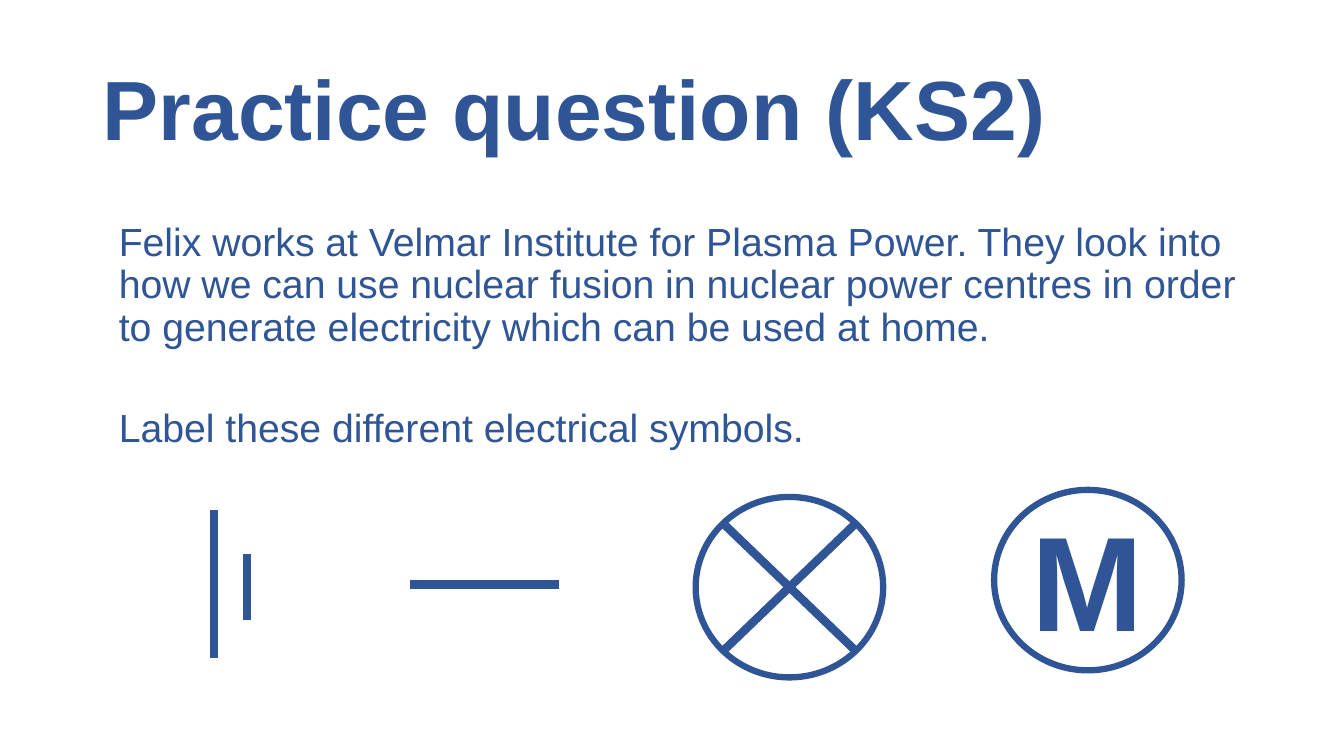
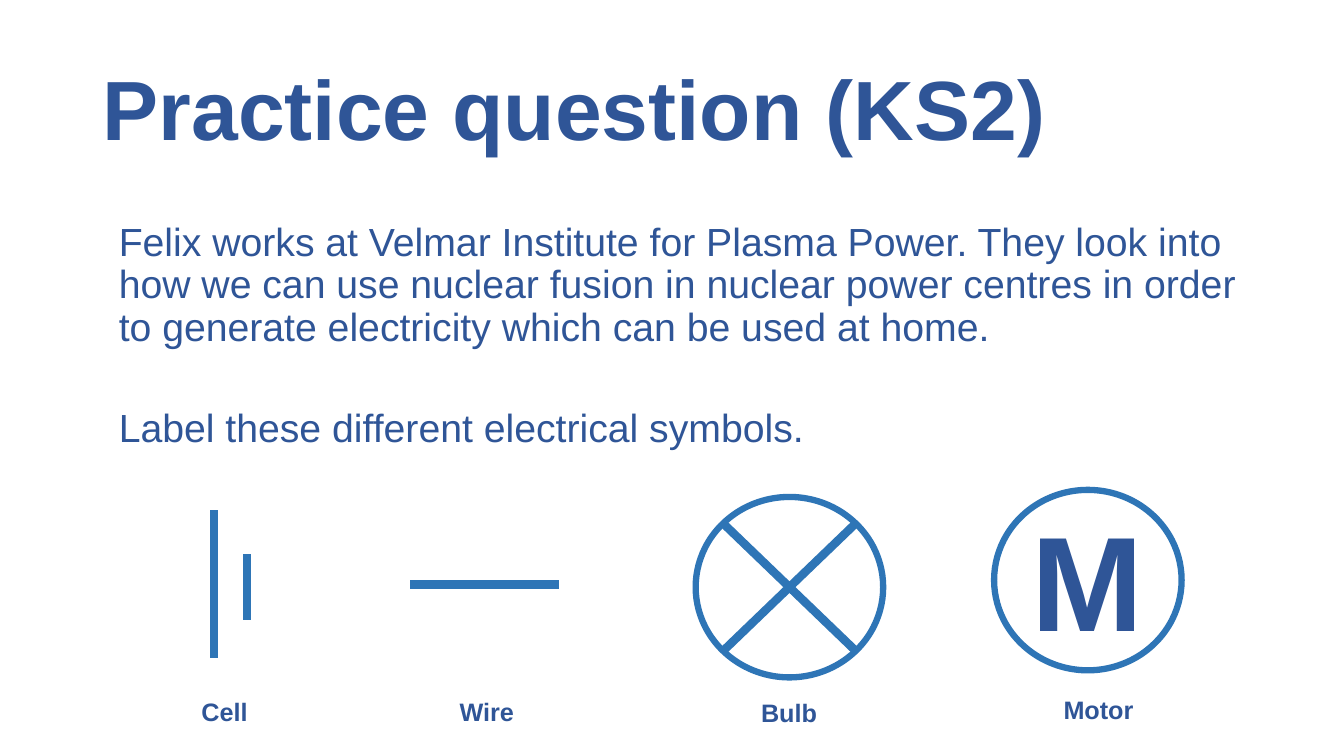
from dataclasses import dataclass
from math import sqrt

from lxml import etree
from pptx import Presentation
from pptx import util as u
from pptx.dml.color import RGBColor
from pptx.enum import shapes, text
from pptx.oxml.ns import qn

PX = 9144  # EMU in one px: 100 px to the inch


@dataclass(frozen=True)
class Theme:
    font: str = "Arial"
    navy: str = "2F5597"
    blue: str = "2E75B6"
    title_size: int = 60
    body_size: int = 28
    motor_size: int = 96
    label_size: int = 18
    stroke: float = 6
    outline: float = 4.5


@dataclass(frozen=True)
class Box:
    left: int
    top: int
    width: int
    height: int

    def emu(self) -> tuple:
        return tuple(u.Emu(n * PX) for n in (self.left, self.top, self.width, self.height))


@dataclass(frozen=True)
class Stroke:
    x1: int
    y1: int
    x2: int
    y2: int


@dataclass(frozen=True)
class Label:
    caption: str
    box: Box


@dataclass(frozen=True)
class Page:
    symbol_color: str
    labels: tuple = ()


THEME = Theme()
TITLE = "Practice question (KS2)"
QUESTION = (
    "Felix works at Velmar Institute for Plasma Power. They look into how we can use "
    "nuclear fusion in nuclear power centres in order to generate electricity which "
    "can be used at home.",
    "Label these different electrical symbols.",
)
TITLE_BOX = Box(92, 40, 1150, 145)
QUESTION_BOX = Box(108, 216, 1150, 476)
BULB = Box(690, 493, 186, 179)
MOTOR = Box(986, 486, 186, 179)
MOTOR_LETTER = Box(1013, 488, 132, 172)
CELL = (Stroke(212, 506, 212, 653), Stroke(245, 550, 245, 615))
WIRE = Stroke(554, 580, 407, 580)
ANSWERS = (
    Label("Cell", Box(190, 686, 66, 40)),
    Label("Wire", Box(446, 686, 75, 40)),
    Label("Bulb", Box(745, 687, 76, 40)),
    Label("Motor", Box(1045, 684, 90, 40)),
)
PAGES = (Page(THEME.navy), Page(THEME.blue, ANSWERS))


def add_text(slide, box: Box, lines: tuple, size: int, bold: bool = True,
             wrap: bool = False, spacing: float = 1.0):
    """Add a text box in the shared font and colour and return its frame."""
    frame = slide.shapes.add_textbox(*box.emu()).text_frame
    frame.word_wrap = wrap
    frame.auto_size = text.MSO_AUTO_SIZE.NONE if wrap else text.MSO_AUTO_SIZE.SHAPE_TO_FIT_TEXT
    frame.text = "\n".join(lines)
    for paragraph in frame.paragraphs:
        paragraph.line_spacing = spacing
        font = paragraph.font
        font.name, font.size, font.bold = THEME.font, u.Pt(size), bold
        font.color.rgb = RGBColor.from_string(THEME.navy)
    return frame


def add_stroke(slide, stroke: Stroke, color: str) -> None:
    ends = (u.Emu(n * PX) for n in (stroke.x1, stroke.y1, stroke.x2, stroke.y2))
    connector = slide.shapes.add_connector(shapes.MSO_CONNECTOR.STRAIGHT, *ends)
    connector.line.color.rgb = RGBColor.from_string(color)
    connector.line.width = u.Pt(THEME.stroke)
    etree.SubElement(connector._element.spPr, qn("a:effectLst"))


def add_circle(slide, box: Box, color: str) -> None:
    shape = slide.shapes.add_shape(shapes.MSO_SHAPE.OVAL, *box.emu())
    shape.shadow.inherit = False
    shape.fill.background()
    shape.line.color.rgb = RGBColor.from_string(color)
    shape.line.width = u.Pt(THEME.outline)


def diagonals(circle: Box) -> tuple:
    """Return the two strokes that cross inside a circle and end on its rim."""
    center_x, center_y = circle.left + circle.width / 2, circle.top + circle.height / 2
    reach_x, reach_y = (side / 2 / sqrt(2) for side in (circle.width, circle.height))
    left, right = round(center_x - reach_x), round(center_x + reach_x)
    top, bottom = round(center_y - reach_y), round(center_y + reach_y)
    return Stroke(right, bottom, left, top), Stroke(left, bottom, right, top)


def add_question(slide) -> None:
    title = add_text(slide, TITLE_BOX, (TITLE,), THEME.title_size, wrap=True, spacing=0.9)
    title.vertical_anchor = text.MSO_ANCHOR.MIDDLE
    question = add_text(slide, QUESTION_BOX, QUESTION, THEME.body_size,
                        bold=False, wrap=True, spacing=0.9)
    for paragraph, gap in zip(question.paragraphs, (10, 42)):
        paragraph.space_before = u.Pt(gap)


def add_symbols(slide, color: str) -> None:
    for circle in (BULB, MOTOR):
        add_circle(slide, circle, color)
    for stroke in (*CELL, WIRE, *diagonals(BULB)):
        add_stroke(slide, stroke, color)
    letter = add_text(slide, MOTOR_LETTER, ("M",), THEME.motor_size)
    letter.paragraphs[0].alignment = text.PP_ALIGN.CENTER


def main() -> None:
    presentation = Presentation()
    presentation.slide_width, presentation.slide_height = u.Emu(1333 * PX), u.Emu(750 * PX)
    blank = presentation.slide_layouts[6]
    for page in PAGES:
        slide = presentation.slides.add_slide(blank)
        add_question(slide)
        add_symbols(slide, page.symbol_color)
        # Answers under the symbols
        for label in page.labels:
            add_text(slide, label.box, (label.caption,), THEME.label_size)
    presentation.save("out.pptx")


if __name__ == "__main__":
    main()
